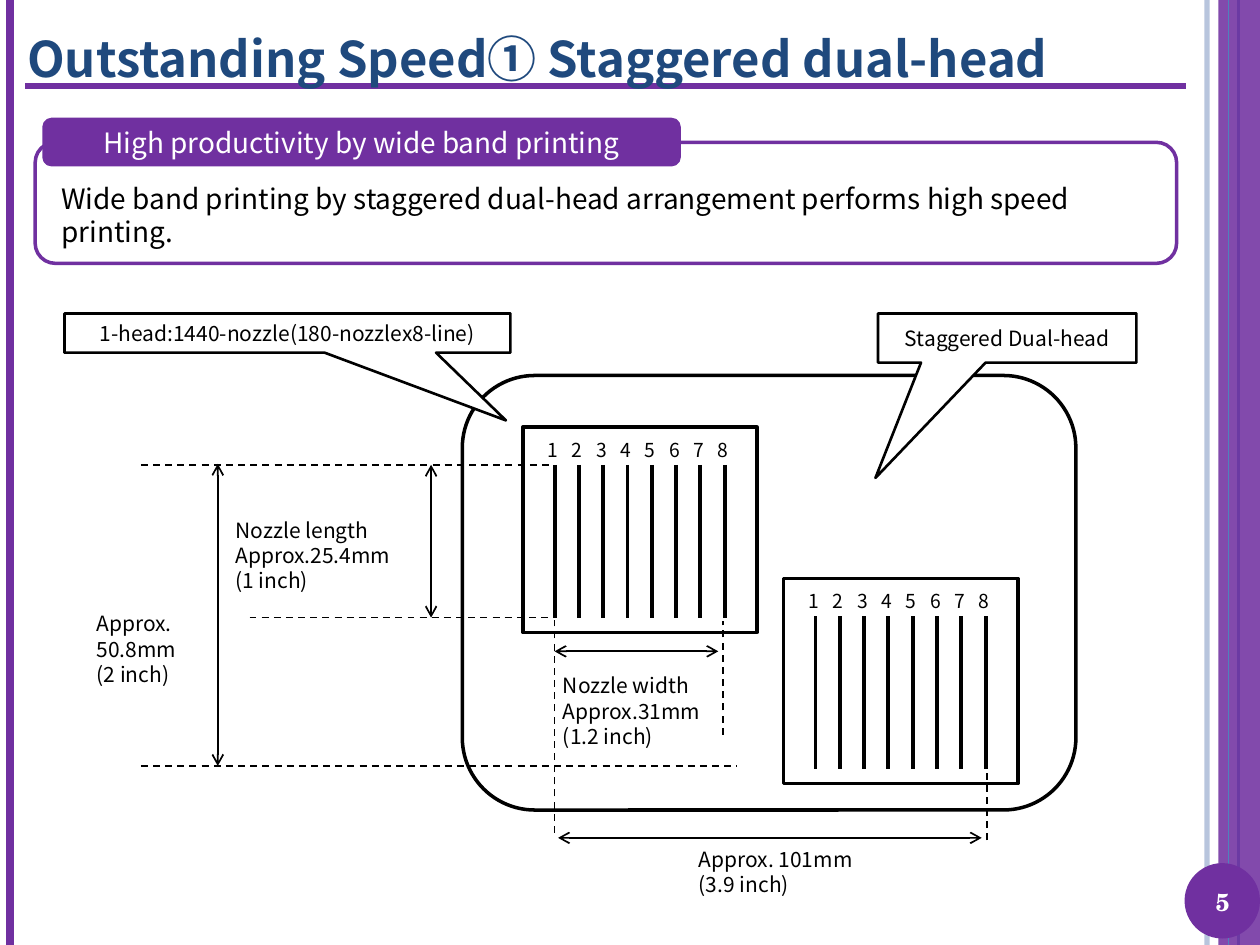
from dataclasses import dataclass

from lxml import etree
from pptx import Presentation
from pptx.dml.color import RGBColor
from pptx.enum.dml import MSO_LINE
from pptx.enum.shapes import MSO_CONNECTOR, MSO_SHAPE
from pptx.enum.text import MSO_ANCHOR, PP_ALIGN
from pptx.oxml.ns import qn
from pptx.util import Cm, Pt

PURPLE = RGBColor(0x70, 0x30, 0xA0)
BLUE = RGBColor(0x4F, 0x81, 0xBD)
PALE_BLUE = RGBColor(0xB3, 0xC1, 0xDB)
NAVY = RGBColor(0x1F, 0x49, 0x7D)
BLACK = RGBColor(0, 0, 0)
WHITE = RGBColor(0xFF, 0xFF, 0xFF)

SANS = "Noto Sans CJK JP"
SERIF = "TeX Gyre Schola"

STRAIGHT = MSO_CONNECTOR.STRAIGHT
DASH = MSO_LINE.DASH
RECTANGLE = MSO_SHAPE.RECTANGLE
ROUNDED = MSO_SHAPE.ROUNDED_RECTANGLE
OVAL = MSO_SHAPE.OVAL
CALLOUT = MSO_SHAPE.RECTANGULAR_CALLOUT
TOP, MIDDLE = MSO_ANCHOR.TOP, MSO_ANCHOR.MIDDLE
LEFT, CENTER = PP_ALIGN.LEFT, PP_ALIGN.CENTER

SLIDE_WIDTH, SLIDE_HEIGHT = 25.4, 19.05
NOZZLE_LINES = 8
NOZZLE_PITCH = 0.49


@dataclass(frozen=True)
class Box:
    left: float
    top: float
    width: float
    height: float

    def lengths(self):
        return Cm(self.left), Cm(self.top), Cm(self.width), Cm(self.height)


@dataclass(frozen=True)
class Stroke:
    x1: float
    y1: float
    x2: float
    y2: float
    color: RGBColor = BLACK
    weight: float = 1
    dashed: bool = False
    arrows: bool = False
    opacity: int = 100


@dataclass(frozen=True)
class Label:
    box: Box
    text: str


@dataclass(frozen=True)
class Callout:
    label: Label
    tip: tuple[float, float]


def set_opacity(properties, percent: int) -> None:
    color = properties.find(f".//{qn('a:srgbClr')}")
    etree.SubElement(color, qn("a:alpha"), val=str(percent * 1000))


def draw_stroke(slide, stroke: Stroke) -> None:
    ends = (Cm(v) for v in (stroke.x1, stroke.y1, stroke.x2, stroke.y2))
    connector = slide.shapes.add_connector(STRAIGHT, *ends)
    connector.line.color.rgb = stroke.color
    connector.line.width = Pt(stroke.weight)
    if stroke.dashed:
        connector.line.dash_style = DASH
    properties = connector.line._get_or_add_ln()
    if stroke.opacity < 100:
        set_opacity(properties, stroke.opacity)
    if stroke.arrows:
        for end in ("a:headEnd", "a:tailEnd"):
            etree.SubElement(properties, qn(end), type="arrow")
    etree.SubElement(properties.getparent(), qn("a:effectLst"))


def draw_shape(slide, kind, box: Box, *, fill=None, line=None, weight: float = 2):
    shape = slide.shapes.add_shape(kind, *box.lengths())
    shape.shadow.inherit = False
    if fill is None:
        shape.fill.background()
    else:
        shape.fill.solid()
        shape.fill.fore_color.rgb = fill
    if line is None:
        shape.line.fill.background()
    else:
        shape.line.color.rgb = line
        shape.line.width = Pt(weight)
    return shape


def write(holder, text: str, *, size: float = 12, font: str = SANS, color=BLACK,
          bold: bool = False, align=LEFT, anchor=TOP, leading: float = 1.2) -> None:
    frame = holder.text_frame
    frame.word_wrap = True
    frame.vertical_anchor = anchor
    for index, words in enumerate(text.split("\n")):
        paragraph = frame.add_paragraph() if index else frame.paragraphs[0]
        paragraph.alignment = align
        paragraph.line_spacing = Pt(size * leading)
        run = paragraph.add_run()
        run.text = words
        run.font.size = Pt(size)
        run.font.bold = bold
        run.font.color.rgb = color
        run.font.name = font
        etree.SubElement(run.font._element, qn("a:ea"), typeface=font)


def draw_label(slide, label: Label, **text_format) -> None:
    write(slide.shapes.add_textbox(*label.box.lengths()), label.text, **text_format)


def draw_callout(slide, callout: Callout) -> None:
    balloon = draw_shape(slide, CALLOUT, callout.label.box, fill=WHITE, line=BLACK, weight=1.5)
    balloon.adjustments[0], balloon.adjustments[1] = callout.tip
    write(balloon, callout.label.text, align=CENTER, anchor=MIDDLE)


def draw_print_head(slide, left: float, top: float) -> None:
    draw_shape(slide, RECTANGLE, Box(left, top, 4.72, 4.14), line=BLACK)
    for index in range(NOZZLE_LINES):
        x = left + 0.64 + index * NOZZLE_PITCH
        draw_stroke(slide, Stroke(x, top + 0.76, x, top + 3.84, weight=2.25))
        numeral = Label(Box(x - 0.39, top + 0.1, 0.64, 0.61), str(index + 1))
        draw_label(slide, numeral, size=11)


FRAME_STROKES = [
    Stroke(24.33, 0, 24.33, SLIDE_HEIGHT, PALE_BLUE, 3, opacity=93),
    Stroke(0.2, 0, 0.2, SLIDE_HEIGHT, PURPLE, 4.5),
    Stroke(24.97, 0, 24.97, SLIDE_HEIGHT, BLUE, 1.5),
]
SIDE_BAND = Box(24.56, 0, 0.84, SLIDE_HEIGHT)
BAND_STROKE = Stroke(24.77, 0, 24.77, SLIDE_HEIGHT, BLUE, 0.75)
TITLE_RULE = Stroke(0.51, 1.73, 23.9, 1.73, PURPLE, 3.5)

PRINT_HEADS = [(10.54, 8.61), (15.8, 11.66)]
GUIDES = [
    Stroke(2.84, 9.37, 11.07, 9.37, dashed=True),
    Stroke(5.03, 12.45, 11.07, 12.45, dashed=True),
    Stroke(2.84, 15.44, 14.86, 15.44, dashed=True),
    Stroke(11.18, 16.79, 11.18, 12.5, dashed=True),
    Stroke(14.58, 14.81, 14.58, 12.52, dashed=True),
    Stroke(19.89, 16.94, 19.89, 15.47, dashed=True),
]
DIMENSIONS = [
    Stroke(4.39, 15.44, 4.39, 9.35, arrows=True),
    Stroke(8.69, 12.45, 8.69, 9.37, arrows=True),
    Stroke(11.18, 13.13, 14.48, 13.13, arrows=True),
    Stroke(11.25, 16.89, 19.79, 16.89, arrows=True),
]
MEASUREMENTS = [
    Label(Box(1.7, 12.19, 3.05, 1.8), "Approx.\n50.8mm\n(2 inch)"),
    Label(Box(4.5, 10.31, 4.01, 1.8), "Nozzle length\nApprox.25.4mm\n(1 inch)"),
    Label(Box(11.1, 13.44, 3.53, 1.8), "Nozzle width\nApprox.31mm\n(1.2 inch)"),
    Label(Box(13.84, 16.94, 4.24, 1.27), "Approx. 101mm\n(3.9 inch)"),
]
CALLOUTS = [
    Callout(Label(Box(1.3, 6.32, 8.99, 0.79), "1-head:1440-nozzle(180-nozzlex8-line)"), (0.49, 2.23)),
    Callout(Label(Box(17.7, 6.32, 5.21, 0.99), "Staggered Dual-head"), (-0.51, 2.85)),
]
TITLE = Label(Box(0.3, 0.36, 24.61, 1.55), "Outstanding Speed① Staggered dual-head")
SUMMARY = Label(
    Box(0.99, 3.53, 22.4, 1.63),
    "Wide band printing by staggered dual-head arrangement performs high speed printing.",
)
PAGE_NUMBER = Label(Box(23.8, 17.45, 1.7, 1.45), "5")


def main() -> None:
    deck = Presentation()
    deck.slide_width, deck.slide_height = Cm(SLIDE_WIDTH), Cm(SLIDE_HEIGHT)
    slide = deck.slides.add_slide(deck.slide_layouts[6])

    for stroke in FRAME_STROKES:
        draw_stroke(slide, stroke)
    band = draw_shape(slide, RECTANGLE, SIDE_BAND, fill=PURPLE)
    set_opacity(band._element.spPr, 87)
    draw_stroke(slide, BAND_STROKE)
    draw_shape(slide, OVAL, Box(23.88, 17.4, 1.52, 1.52), fill=PURPLE)
    draw_label(slide, PAGE_NUMBER, size=14, font=SERIF, color=WHITE, bold=True,
               align=CENTER, anchor=MIDDLE)
    draw_stroke(slide, TITLE_RULE)
    draw_label(slide, TITLE, size=28, color=NAVY, bold=True, leading=1.3)

    draw_shape(slide, ROUNDED, Box(0.71, 2.87, 23.01, 2.44), line=PURPLE)
    heading = draw_shape(slide, ROUNDED, Box(0.89, 2.41, 12.8, 0.91), fill=PURPLE, line=PURPLE)
    write(heading, "High productivity by wide band printing", size=16, color=WHITE,
          align=CENTER, anchor=MIDDLE)
    draw_label(slide, SUMMARY, size=16)

    draw_shape(slide, ROUNDED, Box(9.32, 7.57, 12.37, 8.76), line=BLACK)
    for left, top in PRINT_HEADS:
        draw_print_head(slide, left, top)
    for stroke in GUIDES + DIMENSIONS:
        draw_stroke(slide, stroke)
    for measurement in MEASUREMENTS:
        draw_label(slide, measurement)
    for callout in CALLOUTS:
        draw_callout(slide, callout)

    deck.save("out.pptx")


if __name__ == "__main__":
    main()
